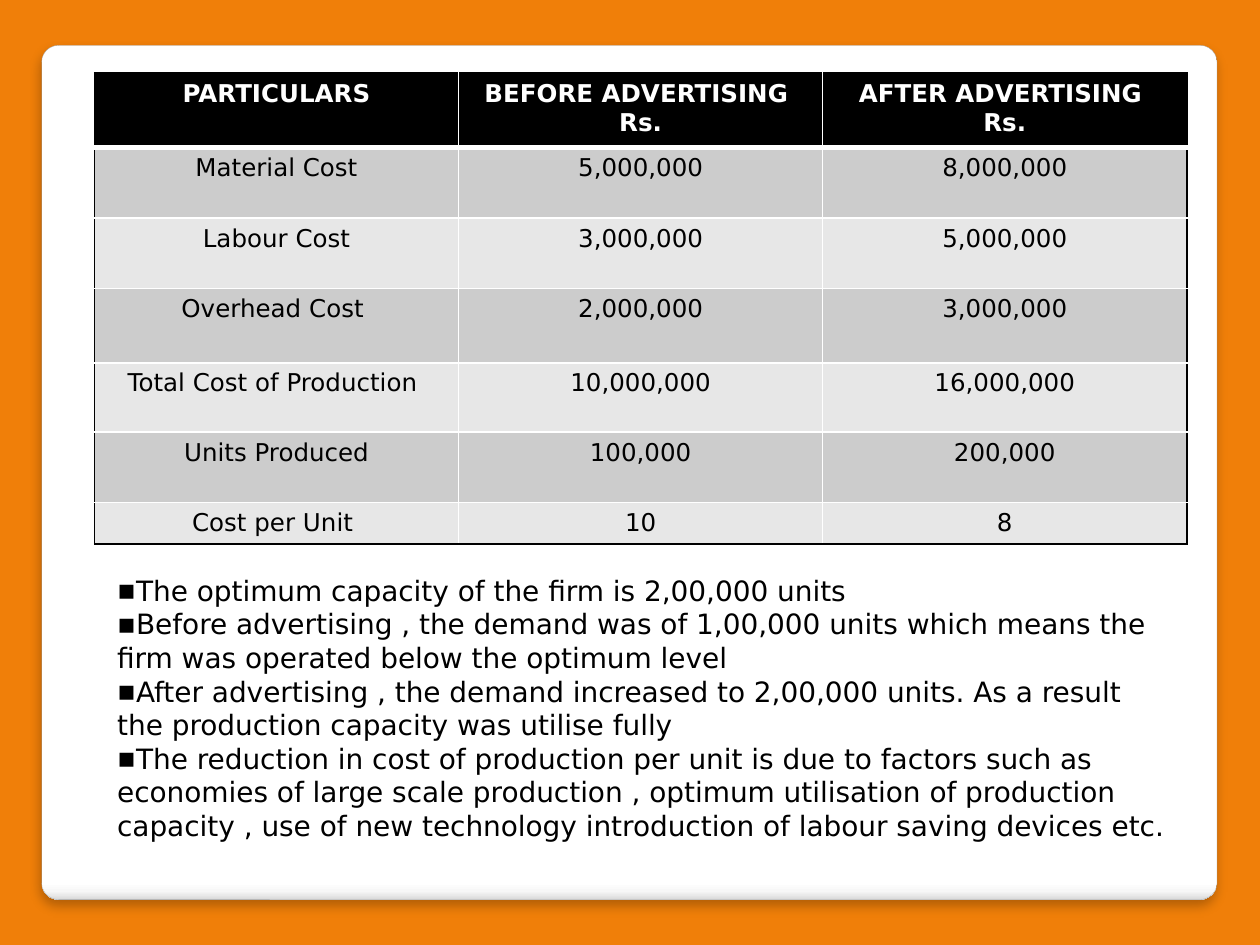
from dataclasses import dataclass

from lxml.etree import SubElement
from pptx import Presentation
from pptx.dml.color import RGBColor
from pptx.enum.shapes import MSO_SHAPE
from pptx.enum.text import MSO_ANCHOR, MSO_AUTO_SIZE, PP_ALIGN
from pptx.oxml import parse_xml
from pptx.oxml.ns import nsdecls, qn
from pptx.util import Inches, Pt


@dataclass(frozen=True)
class Theme:
    """Colours, typeface and type sizes of the deck."""

    font: str = "DejaVu Sans"
    table_size: int = 14
    list_size: int = 16
    background: str = "F07F09"
    dark: str = "000000"
    light: str = "FFFFFF"
    panel_line: str = "A4A4A4"
    panel_stops: tuple = ((0, "FFFFFF"), (98, "FFFFFF"), (99, "F7F7F7"), (100, "DADADA"))
    bands: tuple = ("CCCCCC", "E7E7E7")


HEADINGS = ("PARTICULARS", "BEFORE ADVERTISING \nRs.", "AFTER ADVERTISING \nRs.")
COSTS = (
    ("Material Cost", "5,000,000", "8,000,000"),
    ("Labour Cost", "3,000,000", "5,000,000"),
    ("Overhead Cost ", "2,000,000", "3,000,000"),
    ("Total Cost of Production ", "10,000,000", "16,000,000"),
    ("Units Produced", "100,000", "200,000"),
    ("Cost per Unit ", "10", "8"),
)
ROW_HEIGHTS = (0.59, 0.56, 0.56, 0.59, 0.55, 0.56, 0.33)
COLUMN_WIDTH = 2.89
FINDINGS = (
    "The optimum capacity of the firm is 2,00,000 units",
    "Before advertising , the demand was of 1,00,000 units which means the firm was "
    "operated below the optimum level",
    "After advertising , the demand increased to 2,00,000 units. As a result the "
    "production capacity was utilise fully",
    "The reduction in cost of production per unit is due to factors such as economies "
    "of large scale production , optimum utilisation of production capacity , use of "
    "new technology introduction of labour saving devices etc.",
)


def apply_format(target, values):
    """Set each named attribute of the target."""
    for name, value in values.items():
        setattr(target, name, value)


class SlideBuilder:
    """Draws themed elements on the current slide."""

    def __init__(self, presentation, theme):
        """Add a content slide and colour its background."""
        self.theme = theme
        self.slide = presentation.slides.add_slide(presentation.slide_layouts[1])
        title = self.slide.shapes.title.element
        title.getparent().remove(title)
        fill = self.slide.background.fill
        fill.solid()
        fill.fore_color.rgb = RGBColor.from_string(theme.background)

    def style_text(self, paragraph, size, color, bold=False):
        """Format the font of one paragraph."""
        values = {"name": self.theme.font, "size": Pt(size), "bold": bold}
        apply_format(paragraph.font, values)
        paragraph.font.color.rgb = RGBColor.from_string(color)

    def panel(self, left, top, width, height):
        """Add the rounded white panel with its soft shadow."""
        shape = self.slide.shapes.add_shape(
            MSO_SHAPE.ROUNDED_RECTANGLE,
            Inches(left), Inches(top), Inches(width), Inches(height),
        )
        shape.adjustments[0] = 0.02
        shape.line.color.rgb = RGBColor.from_string(self.theme.panel_line)
        shape.line.width = Pt(0.16)
        shape.fill.gradient()
        properties = shape.element.spPr
        stops = "".join(
            f'<a:gs pos="{position * 1000}"><a:srgbClr val="{color}"/></a:gs>'
            for position, color in self.theme.panel_stops
        )
        gradient = parse_xml(
            f'<a:gradFill {nsdecls("a")} rotWithShape="1"><a:gsLst>{stops}</a:gsLst>'
            '<a:lin ang="5400000" scaled="0"/></a:gradFill>'
        )
        properties.replace(properties.find(qn("a:gradFill")), gradient)
        properties.append(parse_xml(
            f'<a:effectLst {nsdecls("a")}><a:outerShdw blurRad="{Pt(6)}" dist="{Pt(4)}" '
            'dir="5400000" algn="tl" rotWithShape="0"><a:srgbClr '
            f'val="{self.theme.dark}"><a:alpha val="25000"/></a:srgbClr>'
            '</a:outerShdw></a:effectLst>'
        ))

    def borders(self, cell, sides):
        """Draw left, right, top and bottom borders of a cell."""
        properties = cell._tc.get_or_add_tcPr()
        for index, (side, (color, width)) in enumerate(zip("LRTB", sides)):
            properties.insert(index, parse_xml(
                f'<a:ln{side} {nsdecls("a")} w="{Pt(width)}"><a:solidFill>'
                f'<a:srgbClr val="{color}"/></a:solidFill></a:ln{side}>'
            ))

    def table(self, left, top, rows, heights, column_width):
        """Add a banded table with a dark header and outline."""
        theme = self.theme
        columns = len(rows[0])
        table = self.slide.shapes.add_table(
            len(rows), columns, Inches(left), Inches(top),
            Inches(column_width * columns), Inches(sum(heights)),
        ).table
        for column in table.columns:
            column.width = Inches(column_width)
        outer, inner = (theme.dark, 1), (theme.light, 1)
        for row_index, texts in enumerate(rows):
            table.rows[row_index].height = Inches(heights[row_index])
            header = row_index == 0
            last_row = row_index == len(rows) - 1
            fill_color = theme.dark if header else theme.bands[(row_index - 1) % 2]
            below_header = (theme.light, 3)
            top_line = outer if header else below_header if row_index == 1 else inner
            bottom_line = below_header if header else outer if last_row else inner
            for column_index, text in enumerate(texts):
                cell = table.cell(row_index, column_index)
                cell.text = text
                cell.fill.solid()
                cell.fill.fore_color.rgb = RGBColor.from_string(fill_color)
                self.borders(cell, (
                    outer if column_index == 0 else inner,
                    outer if column_index == columns - 1 else inner,
                    top_line,
                    bottom_line,
                ))
                for paragraph in cell.text_frame.paragraphs:
                    paragraph.alignment = PP_ALIGN.CENTER
                    color = theme.light if header else theme.dark
                    self.style_text(paragraph, theme.table_size, color, header)

    def bullet_list(self, left, top, width, height, items):
        """Fill the body placeholder with square bullets."""
        body = self.slide.placeholders[1]
        body.element.getparent().append(body.element)
        apply_format(body, {
            "left": Inches(left), "top": Inches(top),
            "width": Inches(width), "height": Inches(height),
        })
        frame = body.text_frame
        frame.text = "\n".join(items)
        apply_format(frame, {
            "word_wrap": True,
            "auto_size": MSO_AUTO_SIZE.SHAPE_TO_FIT_TEXT,
            "vertical_anchor": MSO_ANCHOR.TOP,
        })
        for paragraph in frame.paragraphs:
            properties = paragraph._p.get_or_add_pPr()
            properties.set("marL", "0")
            properties.set("indent", "0")
            SubElement(properties, qn("a:buFont"), typeface=self.theme.font)
            SubElement(properties, qn("a:buChar"), char="▪")
            apply_format(paragraph, {
                "alignment": PP_ALIGN.LEFT, "space_before": Pt(0), "space_after": Pt(0),
            })
            self.style_text(paragraph, self.theme.list_size, self.theme.dark)


def main():
    """Build and save the cost comparison slide."""
    presentation = Presentation()
    apply_format(presentation, {"slide_width": Inches(10), "slide_height": Inches(7.5)})
    builder = SlideBuilder(presentation, Theme())
    builder.panel(0.33, 0.36, 9.33, 6.78)
    builder.table(0.75, 0.58, (HEADINGS, *COSTS), ROW_HEIGHTS, COLUMN_WIDTH)
    builder.bullet_list(0.83, 4.5, 8.58, 2.26, FINDINGS)
    presentation.save("out.pptx")


if __name__ == "__main__":
    main()
